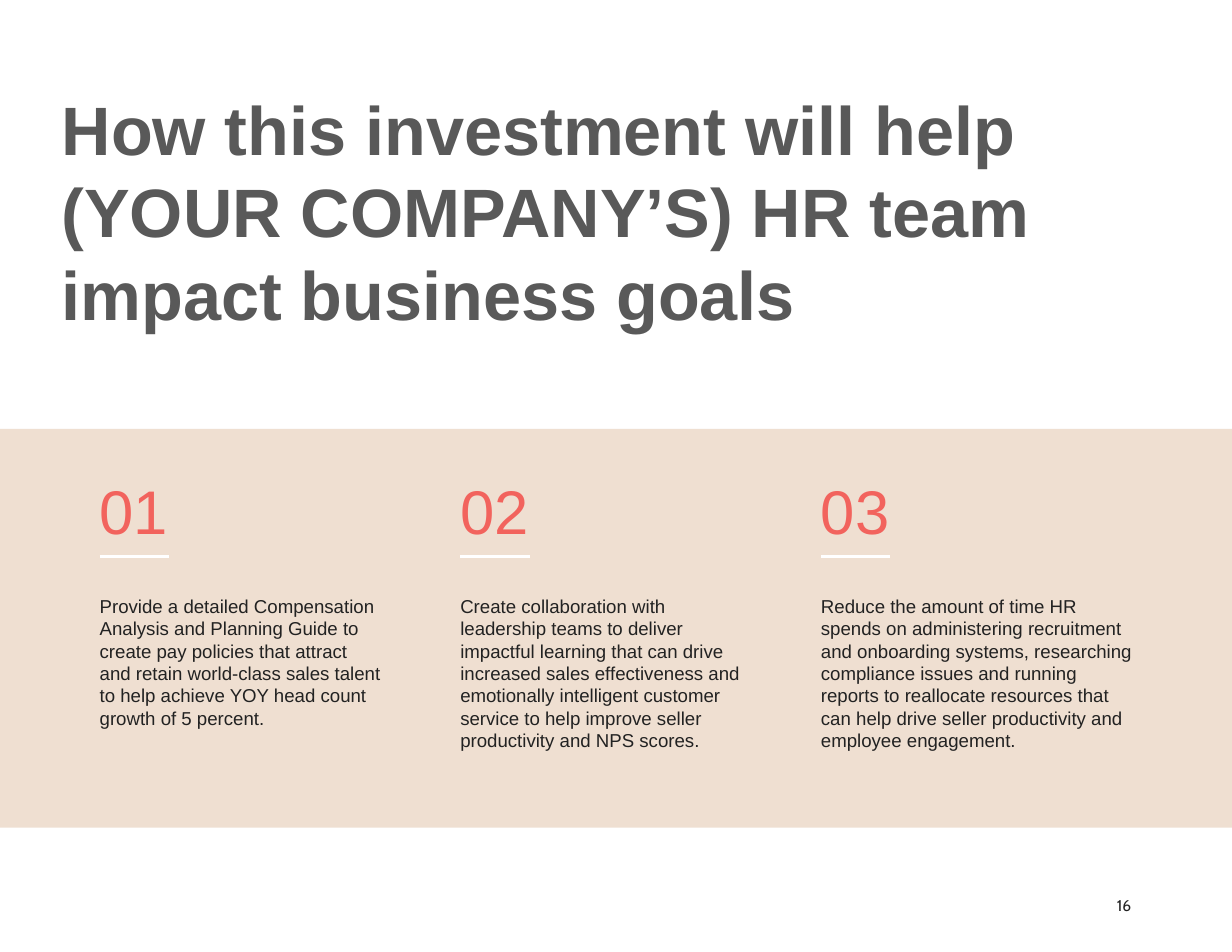
from dataclasses import dataclass

from lxml import etree
from pptx import Presentation
from pptx.dml.color import RGBColor
from pptx.enum.shapes import MSO_CONNECTOR, MSO_SHAPE
from pptx.enum.text import MSO_ANCHOR, PP_ALIGN
from pptx.oxml.ns import qn
from pptx.util import Inches, Pt

STRAIGHT = MSO_CONNECTOR.STRAIGHT
RECTANGLE = MSO_SHAPE.RECTANGLE
TOP, MIDDLE = MSO_ANCHOR.TOP, MSO_ANCHOR.MIDDLE
LEFT, RIGHT = PP_ALIGN.LEFT, PP_ALIGN.RIGHT

SLIDE_WIDTH, SLIDE_HEIGHT = 11, 8.5
COLUMN_LEFT, COLUMN_PITCH = 0.89, 3.22
RULE_WIDTH = 0.62

TITLE = "How this investment will help (YOUR COMPANY’S) HR team impact business goals"
GOALS = [
    ("Provide a detailed Compensation Analysis and Planning Guide to create pay policies "
     "that attract and retain world-class sales talent to help achieve YOY head count "
     "growth of 5 percent.", 2.53),
    ("Create collaboration with leadership teams to deliver impactful learning that can "
     "drive increased sales effectiveness and emotionally intelligent customer service to "
     "help improve seller productivity and NPS scores.", 2.53),
    ("Reduce the amount of time HR spends on administering recruitment and onboarding "
     "systems, researching compliance issues and running reports to reallocate resources "
     "that can help drive seller productivity and employee engagement.", 2.81),
]


@dataclass(frozen=True)
class TextStyle:
    """Type settings for one kind of text."""
    size: float
    color: str
    font: str = "Arial"
    bold: bool = False
    space_after: float = 0
    leading: float = 1.2
    anchor: MSO_ANCHOR = TOP
    alignment: PP_ALIGN = LEFT
    wrap: bool = True


@dataclass(frozen=True)
class Theme:
    """Colours and type of the slide."""
    band: str = "EFDFD1"
    rule: str = "FFFFFF"
    rule_weight: float = 1.5
    title: TextStyle = TextStyle(44, "595959", bold=True, space_after=6.6)
    number: TextStyle = TextStyle(39.6, "F2635D", space_after=6.6, anchor=MIDDLE)
    body: TextStyle = TextStyle(12, "222222", space_after=19.8)
    page: TextStyle = TextStyle(10, "222222", font="Cabin", anchor=MIDDLE,
                                alignment=RIGHT, wrap=False)


THEME = Theme()


def set_attributes(target, values):
    """Set each named attribute of the target."""
    for name, value in values.items():
        setattr(target, name, value)


def add_text(slide, box, text, style):
    """Place one paragraph of styled text in the box."""
    shape = slide.shapes.add_textbox(*map(Inches, box))
    frame = shape.text_frame
    set_attributes(frame, {
        "margin_left": 0, "margin_right": 0, "margin_top": 0, "margin_bottom": 0,
        "word_wrap": style.wrap, "vertical_anchor": style.anchor,
    })
    paragraph = frame.paragraphs[0]
    set_attributes(paragraph, {
        "alignment": style.alignment, "space_after": Pt(style.space_after),
        "line_spacing": Pt(style.size * style.leading),
    })
    run = paragraph.add_run()
    run.text = text
    set_attributes(run.font, {"name": style.font, "size": Pt(style.size), "bold": style.bold})
    run.font.color.rgb = RGBColor.from_string(style.color)


def add_band(slide, box):
    """Fill the box with the band colour."""
    shape = slide.shapes.add_shape(RECTANGLE, *map(Inches, box))
    shape.shadow.inherit = False
    shape.fill.solid()
    shape.fill.fore_color.rgb = RGBColor.from_string(THEME.band)
    shape.line.fill.background()


def add_rule(slide, left, top, width):
    """Draw a horizontal rule."""
    ends = map(Inches, (left, top, left + width, top))
    connector = slide.shapes.add_connector(STRAIGHT, *ends)
    connector.line.color.rgb = RGBColor.from_string(THEME.rule)
    connector.line.width = Pt(THEME.rule_weight)
    etree.SubElement(connector._element.spPr, qn("a:effectLst"))


def add_goal(slide, box, number, text):
    """Stack a number, a rule and a text inside the box."""
    left, top, width, height = box
    add_text(slide, (left, top, RULE_WIDTH, 0.58), f"{number:02d}", THEME.number)
    add_rule(slide, left, top + 0.71, RULE_WIDTH)
    add_text(slide, (left, top + 1.05, width, height - 1.05), text, THEME.body)


def add_goals(slide, box):
    """Lay the goals out in equal columns on a band."""
    add_band(slide, box)
    for index, (text, width) in enumerate(GOALS):
        left = box[0] + COLUMN_LEFT + index * COLUMN_PITCH
        add_goal(slide, (left, box[1] + 0.43, width, 1.9), index + 1, text)


def main():
    """Build and save the slide."""
    presentation = Presentation()
    set_attributes(presentation, {"slide_width": Inches(SLIDE_WIDTH),
                                  "slide_height": Inches(SLIDE_HEIGHT)})
    slide = presentation.slides.add_slide(presentation.slide_layouts[6])
    add_text(slide, (0.55, 0.78, 9.38, 2.22), TITLE, THEME.title)
    add_goals(slide, (0, 3.83, SLIDE_WIDTH, 3.56))
    add_text(slide, (9.94, 8, 0.16, 0.17), "16", THEME.page)
    presentation.save("out.pptx")


if __name__ == "__main__":
    main()
